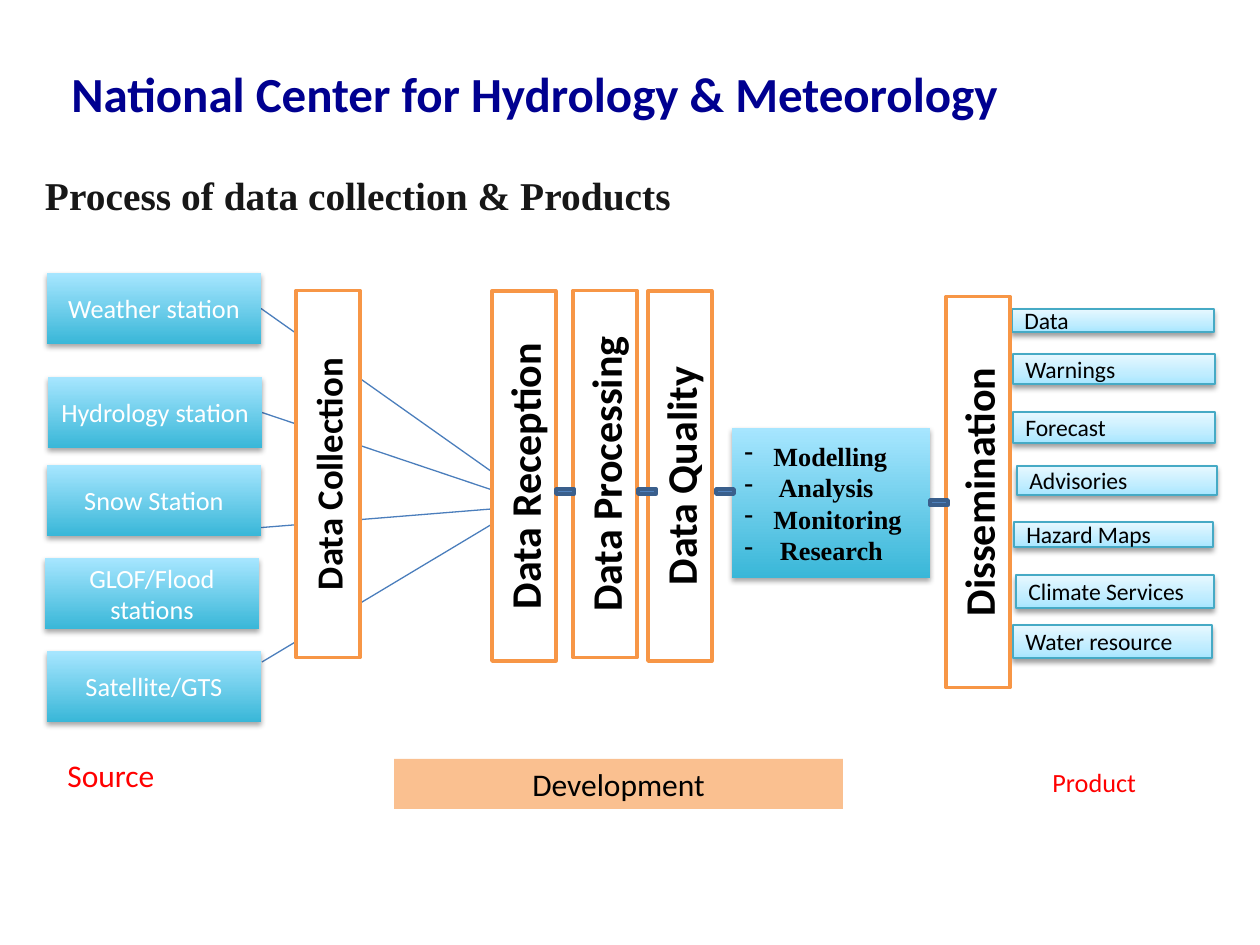
"""Build a slide showing how hydrology and weather data turn into products."""
import lxml.etree
import pptx
import pptx.dml.color
import pptx.enum.shapes
import pptx.enum.text
import pptx.oxml.ns
import pptx.util

PX = 914400 / 126
THEME = {
    "sans": "Calibri", "serif": "Times New Roman",
    "white": "FFFFFF", "black": "000000", "red": "FF0000",
    "navy": "000090", "ink": "171717", "wire": "4B7EBC",
    "frame": "F79646", "peach": "FAC090", "tick": "4F81BD",
    "edge": "3A5F8C", "rim": "46AAC5",
    "deep": [(0, "39B7D8"), (100, "A7E6FF")],
    "pale": [(0, "A7E6FF"), (35, "C1EDFF"), (100, "E7F8FF")],
    "title": 28, "head": 22.5, "stage": 24, "small": 21,
    "label": 18, "body": 15, "item": 13.5,
}
RGB = pptx.dml.color.RGBColor.from_string
ALIGN = pptx.enum.text.PP_ALIGN
ANCHOR = pptx.enum.text.MSO_ANCHOR
qn = pptx.oxml.ns.qn
add = lxml.etree.SubElement

deck = pptx.Presentation()
deck.slide_width = round(1260 * PX)
deck.slide_height = round(945 * PX)
slide = deck.slides.add_slide(deck.slide_layouts[6])
shapes = slide.shapes


def write(shape, text, size, color="black", font="sans", bold=False,
          align=ALIGN.LEFT, anchor=ANCHOR.MIDDLE, wrap=True, grow=False,
          bullet=None, space=None):
    frame = shape.text_frame
    frame.word_wrap = wrap
    frame.vertical_anchor = anchor
    if grow:
        frame.auto_size = pptx.enum.text.MSO_AUTO_SIZE.SHAPE_TO_FIT_TEXT
    frame.text = text
    for para in frame.paragraphs:
        para.alignment = align
        if space:
            para.line_spacing = space
        if bullet:
            props = para._p.get_or_add_pPr()
            props.set("marL", str(round(29 * PX)))
            props.set("indent", str(round(-29 * PX)))
            add(props, qn("a:buChar")).set("char", bullet)
        for run in para.runs:
            run.font.name = THEME[font]
            run.font.size = pptx.util.Pt(THEME[size])
            run.font.bold = bold
            run.font.color.rgb = RGB(THEME[color])


def box(x, y, w, h, fill, line=None, width=2, shade=None):
    shape = shapes.add_shape(pptx.enum.shapes.MSO_SHAPE.RECTANGLE,
                             *(round(n * PX) for n in (x, y, w, h)))
    shape.shadow.inherit = False
    paint = THEME[fill]
    if isinstance(paint, str):
        shape.fill.solid()
        shape.fill.fore_color.rgb = RGB(paint)
    else:
        shape.fill.gradient()
        shape.fill.gradient_angle = 90
        stops = shape._element.spPr.find(".//" + qn("a:gsLst"))
        for old in list(stops):
            stops.remove(old)
        for spot, color in paint:
            stop = add(stops, qn("a:gs"), pos=str(spot * 1000))
            add(stop, qn("a:srgbClr"), val=color)
    if line:
        shape.line.color.rgb = RGB(THEME[line])
        shape.line.width = pptx.util.Pt(width)
    else:
        shape.line.fill.background()
    if shade:
        glow = add(shape._element.spPr.find(qn("a:effectLst")), qn("a:outerShdw"),
                   blurRad="39400", dist="22900", dir="5400000", rotWithShape="0")
        tint = add(glow, qn("a:srgbClr"), val=THEME["black"])
        add(tint, qn("a:alpha"), val=str(shade * 1000))
    return shape


wires = []
for ends in [(261, 309, 519, 491), (262, 411, 519, 499),
             (244, 529, 504, 508), (262, 662, 519, 508)]:
    wire = shapes.add_connector(pptx.enum.shapes.MSO_CONNECTOR.STRAIGHT,
                                *(round(n * PX) for n in ends))
    wire.line.color.rgb = RGB(THEME["wire"])
    wire.line.width = pptx.util.Pt(0.75)
    add(wire._element.spPr, qn("a:effectLst"))
    wires.append(wire)

sources = []
for x, y, name in [(47, 273, "Weather station"), (48, 377, "Hydrology station"),
                   (47, 465, "Snow Station"), (45, 558, "GLOF/Flood stations"),
                   (47, 651, "Satellite/GTS")]:
    source = box(x, y, 214, 71, "deep", shade=35)
    write(source, name, "body", "white", align=ALIGN.CENTER)
    sources.append(source)
for wire, source in zip(wires[:2], sources):
    wire.begin_connect(source, 3)

model = box(732, 428, 198, 150, "deep", shade=35)
write(model, "Modelling\n Analysis\nMonitoring\n Research", "body",
      font="serif", bold=True, bullet="-")

for x, y, w, h, name in [
    (1012, 309, 202, 23, "Data"), (1013, 354, 202, 30, "Warnings"),
    (1013, 412, 202, 31, "Forecast"), (1017, 466, 200, 29, "Advisories"),
    (1014, 522, 199, 25, "Hazard Maps"), (1016, 575, 198, 33, "Climate Services"),
    (1013, 625, 199, 33, "Water resource"),
]:
    write(box(x, y, w, h, "pale", "rim", 0.75, 38), name, "item")

for mid, level, long, name, size in [
    (328, 474, 367, "Data Collection", "small"),
    (524, 476, 370, "Data Reception", "stage"),
    (605, 474, 367, "Data Processing", "stage"),
    (680, 476, 370, "Data Quality", "stage"),
    (978, 492, 391, "Dissemination", "stage"),
]:
    stage = box(mid - long / 2, level - 32, long, 64, "white", "frame")
    stage.rotation = 270
    write(stage, name, size, bold=True, align=ALIGN.CENTER)

for x, y in [(556, 489), (638, 489), (716, 489), (930, 500)]:
    box(x, y, 18, 5, "tick", "edge")

write(box(394, 759, 449, 50, "peach"), "Development", "label",
      align=ALIGN.CENTER, anchor=ANCHOR.TOP, grow=True)

label = {"anchor": ANCHOR.TOP, "wrap": False, "grow": True}
for x, y, w, h, text, style in [
    (55, 750, 113, 50, "Source", {"size": "label", "color": "red", **label}),
    (1040, 760, 110, 44, "Product", {"size": "body", "color": "red", **label}),
    (45, 166, 688, 62, "Process of data collection & Products",
     {"size": "head", "color": "ink", "font": "serif", "bold": True, "space": 0.95}),
    (59, 57, 963, 72, "National Center for Hydrology & Meteorology",
     {"size": "title", "color": "navy", "bold": True, **label}),
]:
    note = shapes.add_textbox(*(round(n * PX) for n in (x, y, w, h)))
    if style["size"] == "head":
        note.text_frame.margin_left = note.text_frame.margin_right = 0
    write(note, text, **style)

deck.save("out.pptx")
